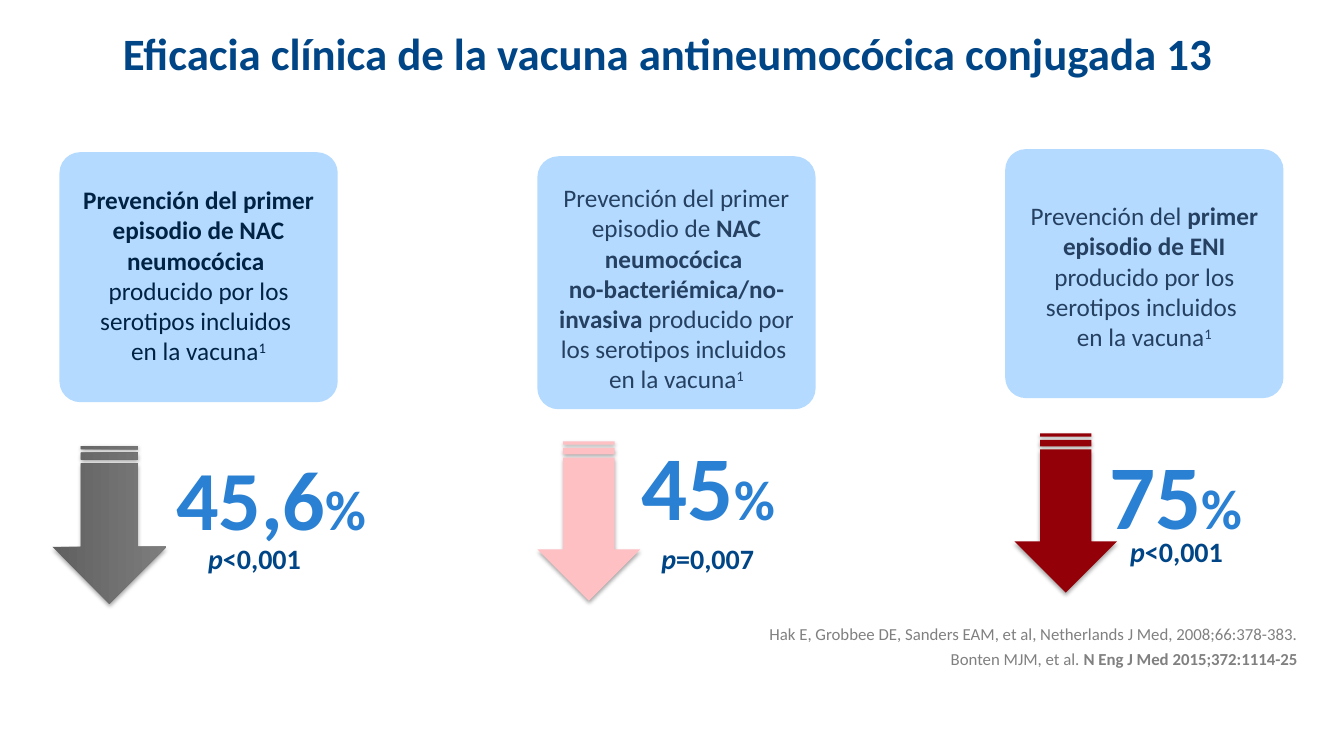
from dataclasses import dataclass

from lxml import etree
from pptx import Presentation
from pptx import util as u
from pptx.dml.color import RGBColor
from pptx.enum import shapes, text
from pptx.oxml import ns


@dataclass(frozen=True)
class Theme:
    """Colours, type sizes and font of the slide."""
    font: str = "Calibri"
    panel: str = "B4DBFF"
    dark: str = "002243"
    slate: str = "254061"
    navy: str = "004586"
    blue: str = "2A81D3"
    grey: str = "808080"
    pink: str = "FFC0C4"
    red: str = "940008"
    steel: tuple = ("606060", "7D7D7D")
    title: int = 32
    body: int = 18
    percent: int = 40
    p_value: int = 20
    source: int = 12


THEME = Theme()
LEFT, CENTER, RIGHT = text.PP_ALIGN.LEFT, text.PP_ALIGN.CENTER, text.PP_ALIGN.RIGHT


def frame(area):
    """Turn left, top, width and height into lengths."""
    return [u.Inches(value) for value in area]


def add_span(para, words, size, color, bold=False, italic=False, raised=False):
    """Add formatted words to a paragraph, with line breaks where marked."""
    for index, line in enumerate(words.split("\n")):
        if index:
            para.add_line_break()
        if not line:
            continue
        span = para.add_run()
        span.text = line
        span.font.name = THEME.font
        span.font.size = u.Pt(size)
        span.font.bold = bold
        span.font.italic = italic
        span.font.color.rgb = RGBColor.from_string(color)
        if raised:
            span.font._element.set("baseline", "30000")


def add_text(slide, area, paragraphs, align=LEFT, gap=0):
    """Add a text box; each paragraph is a list of span settings."""
    box = slide.shapes.add_textbox(*frame(area))
    box.text_frame.word_wrap = True
    for index, spans in enumerate(paragraphs):
        para = box.text_frame.add_paragraph() if index else box.text_frame.paragraphs[0]
        para.alignment = align
        if index:
            para.space_before = u.Pt(gap)
        for words, size, color, *style in spans:
            add_span(para, words, size, color, *style)


def add_panel(slide, area, text_top, text_height, color, paragraphs):
    """Add a rounded panel with its outcome text, given as words and weight."""
    panel = slide.shapes.add_shape(shapes.MSO_SHAPE.ROUNDED_RECTANGLE, *frame(area))
    panel.adjustments[0] = 0.083
    panel.shadow.inherit = False
    panel.fill.solid()
    panel.fill.fore_color.rgb = RGBColor.from_string(THEME.panel)
    panel.line.fill.background()
    spans = [[(words, THEME.body, color, bold) for words, bold in para]
             for para in paragraphs]
    spans[-1].append(("1", THEME.body, color, False, False, True))
    left, _, width, _ = area
    add_text(slide, (left, text_top, width, text_height), spans, CENTER)


def add_shadow(shape):
    """Give a shape a soft shadow falling straight down."""
    shape.shadow.inherit = False
    effects = shape._element.spPr.find(ns.qn("a:effectLst"))
    shadow = etree.SubElement(effects, ns.qn("a:outerShdw"), blurRad=str(u.Pt(3.1)),
                              dist=str(u.Pt(1.8)), dir="5400000", rotWithShape="0")
    color = etree.SubElement(shadow, ns.qn("a:srgbClr"), val="000000")
    etree.SubElement(color, ns.qn("a:alpha"), val="35000")


def add_down_arrow(slide, area, color):
    """Add a striped arrow turned downwards, in one colour or a gradient pair."""
    arrow = slide.shapes.add_shape(shapes.MSO_SHAPE.STRIPED_RIGHT_ARROW, *frame(area))
    arrow.rotation = 90
    arrow.line.fill.background()
    if isinstance(color, tuple):
        arrow.fill.gradient()
        arrow.fill.gradient_angle = 90
        for stop, tone in zip(arrow.fill.gradient_stops, color):
            stop.color.rgb = RGBColor.from_string(tone)
    else:
        arrow.fill.solid()
        arrow.fill.fore_color.rgb = RGBColor.from_string(color)
    add_shadow(arrow)


def add_result(slide, arrow, color, figure_area, figure, size, align, p_area, p_value):
    """Add an arrow with its reduction figure and p value."""
    add_down_arrow(slide, arrow, color)
    add_text(slide, figure_area, [[(figure, size, THEME.blue, True),
                                   ("%", THEME.percent, THEME.blue, True)]], align)
    add_text(slide, p_area, [[("p", THEME.p_value, THEME.navy, True, True),
                              (p_value, THEME.p_value, THEME.navy, True)]], CENTER)


def main():
    """Build the vaccine efficacy slide."""
    deck = Presentation()
    deck.slide_width, deck.slide_height = u.Inches(13.33), u.Inches(7.5)
    slide = deck.slides.add_slide(deck.slide_layouts[6])

    add_text(slide, (1.12, 0.21, 11.17, 0.64),
             [[("Eficacia clínica de la vacuna antineumocócica conjugada 13",
                THEME.title, THEME.navy, True)]])

    add_panel(slide, (0.59, 1.51, 2.76, 2.48), 1.78, 1.92, THEME.dark, [
        [("Prevención del primer episodio de NAC neumocócica \n", True),
         ("producido por los serotipos incluidos \nen la vacuna", False)]])
    add_panel(slide, (5.33, 1.55, 2.76, 2.51), 1.76, 2.22, THEME.slate, [
        [("Prevención del primer episodio de ", False),
         ("NAC neumocócica \nno-bacteriémica/no-invasiva", True),
         (" producido por los serotipos incluidos \nen la vacuna", False)]])
    add_panel(slide, (9.97, 1.48, 2.76, 2.47), 1.94, 1.61, THEME.slate, [
        [("Prevención del ", False), ("primer episodio de ENI ", True),
         ("producido por los serotipos incluidos ", False)],
        [("en la vacuna", False)]])

    add_result(slide, (0.3, 4.64, 1.57, 1.13), THEME.steel,
               (1.65, 4.38, 2.36, 1.11), "45,6", 60, LEFT,
               (1.48, 5.32, 2.09, 0.44), "<0,001")
    add_result(slide, (5.05, 4.66, 1.58, 1.02), THEME.pink,
               (5.96, 4.21, 2.13, 1.19), "45", 65, CENTER,
               (6.35, 5.32, 1.34, 0.44), "=0,007")
    add_result(slide, (9.78, 4.58, 1.58, 1.02), THEME.red,
               (10.6, 4.3, 2.13, 1.19), "75", 65, CENTER,
               (11, 5.25, 1.34, 0.44), "<0,001")

    add_text(slide, (5.65, 6.14, 7.32, 0.81), [
        [("Hak E, Grobbee DE, Sanders EAM, et al, Netherlands J Med, 2008;66:378-383.",
          THEME.source, THEME.grey)],
        [("Bonten MJM, et al. ", THEME.source, THEME.grey),
         ("N Eng J Med 2015;372:1114-25", THEME.source, THEME.grey, True)],
    ], RIGHT, gap=3)

    deck.save("out.pptx")


if __name__ == "__main__":
    main()
